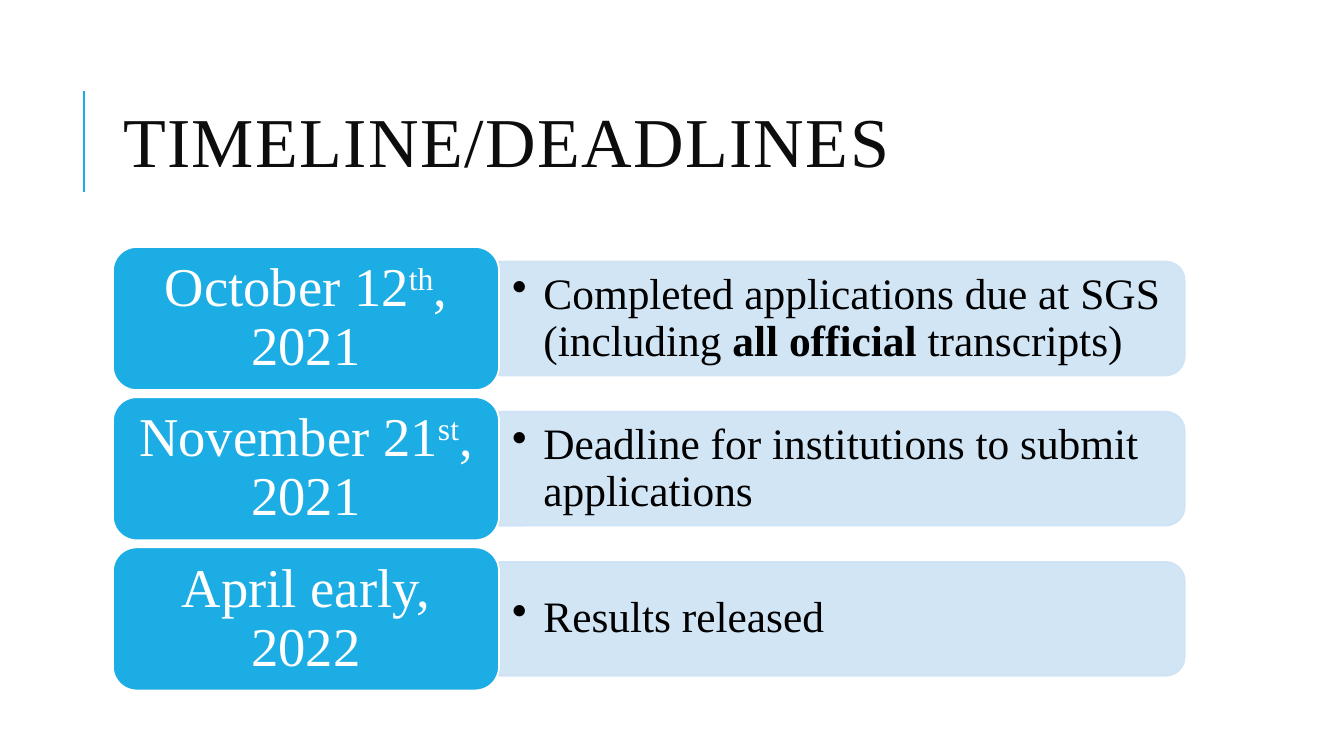
from pptx import Presentation
from pptx.dml.color import RGBColor
from pptx.enum.shapes import MSO_CONNECTOR, MSO_SHAPE
from pptx.enum.text import MSO_ANCHOR, MSO_AUTO_SIZE, PP_ALIGN
from pptx.oxml.ns import qn
from pptx.util import Pt
from lxml.etree import SubElement

PX = 9144  # 100 px to the inch
FONT = "Times New Roman"
COLORS = {
    "accent": "1CADE4",
    "band": "CDE3F5",
    "title": "0D0D0D",
    "black": "000000",
    "white": "FFFFFF",
}
ROW_PITCH = 149
BAND_WIDTH, BAND_HEIGHT = 680, 113
BAND_CENTER_X, FIRST_CENTER_Y = 835, 316

# Each run is (text, extra run properties)
ROWS = [
    ([("October 12", {}), ("th", {"baseline": "30000"}), (", 2021", {})],
     [("Completed applications due at SGS (including ", {}),
      ("all official ", {"b": "1"}), ("transcripts)", {})]),
    ([("November 21", {}), ("st", {"baseline": "30000"}), (", 2021", {})],
     [("Deadline for institutions to submit applications", {})]),
    ([("April early, 2022", {})],
     [("Results released", {})]),
]


def rgb(name):
    return RGBColor.from_string(COLORS[name])


def write_text(shape, runs, size, color, align, spacing, margins):
    """Fill a shape with one paragraph; margins are (horizontal, vertical) in px."""
    frame = shape.text_frame
    horizontal, vertical = (margin * PX for margin in margins)
    frame_format = {
        "word_wrap": True, "auto_size": MSO_AUTO_SIZE.NONE,
        "vertical_anchor": MSO_ANCHOR.MIDDLE,
        "margin_left": horizontal, "margin_right": horizontal,
        "margin_top": vertical, "margin_bottom": vertical,
    }
    for name, value in frame_format.items():
        setattr(frame, name, value)
    paragraph = frame.paragraphs[0]
    paragraph.alignment = align
    paragraph.line_spacing = spacing
    for text, properties in runs:
        run = paragraph.add_run()
        run.text = text
        for name, value in {"name": FONT, "size": Pt(size)}.items():
            setattr(run.font, name, value)
        run.font.color.rgb = rgb(color)
        for name, value in properties.items():
            run._r.get_or_add_rPr().set(name, value)
    return paragraph


presentation = Presentation()
presentation.slide_width = 1333 * PX
presentation.slide_height = 750 * PX
slide = presentation.slides.add_slide(presentation.slide_layouts[5])
shapes = slide.shapes

# Title with its rule
title = shapes.title
for name, value in {"left": 112, "top": 64, "width": 1063, "height": 164}.items():
    setattr(title, name, value * PX)
write_text(title, [("TIMELINE/DEADLINES", {"spc": "100"})], 50, "title",
           PP_ALIGN.LEFT, 0.8, (10, 5))

title_rule = shapes.add_connector(
    MSO_CONNECTOR.STRAIGHT, 83 * PX, 190 * PX, 83 * PX, 90 * PX)
title_rule.line.color.rgb = rgb("accent")
title_rule.line.width = Pt(1.5)
SubElement(title_rule._element.spPr, qn("a:effectLst"))

# One row per deadline: band, description, date
for index, (date_runs, detail_runs) in enumerate(ROWS):
    center_y = FIRST_CENTER_Y + index * ROW_PITCH

    # The band stands upright and is turned so its round corners face right
    band = shapes.add_shape(
        MSO_SHAPE.ROUND_2_SAME_RECTANGLE,
        int((BAND_CENTER_X - BAND_HEIGHT / 2) * PX),
        (center_y - BAND_WIDTH // 2) * PX,
        BAND_HEIGHT * PX, BAND_WIDTH * PX)
    band.rotation = 90
    date = shapes.add_shape(
        MSO_SHAPE.ROUNDED_RECTANGLE,
        112 * PX, (center_y - 71) * PX, 383 * PX, 142 * PX)

    for shape, fill, line in ((band, "band", "band"), (date, "accent", "white")):
        shape.shadow.inherit = False
        shape.fill.solid()
        shape.fill.fore_color.rgb = rgb(fill)
        shape.line.color.rgb = rgb(line)
        shape.line.width = Pt(1.25)
    for color in band._element.spPr.iter(qn("a:srgbClr")):
        SubElement(color, qn("a:alpha"), val="90000")

    write_text(date, date_runs, 39, "white", PP_ALIGN.CENTER, 0.9, (16, 8))

    detail = shapes.add_textbox(
        495 * PX, (center_y - 51) * PX, 675 * PX, 102 * PX)
    paragraph = write_text(detail, detail_runs, 31, "black", PP_ALIGN.LEFT, 0.9, (13, 6))
    properties = paragraph._p.get_or_add_pPr()
    properties.set("marL", str(31 * PX))
    properties.set("indent", str(-31 * PX))
    SubElement(properties, qn("a:buChar"), char="•")

presentation.save("out.pptx")
